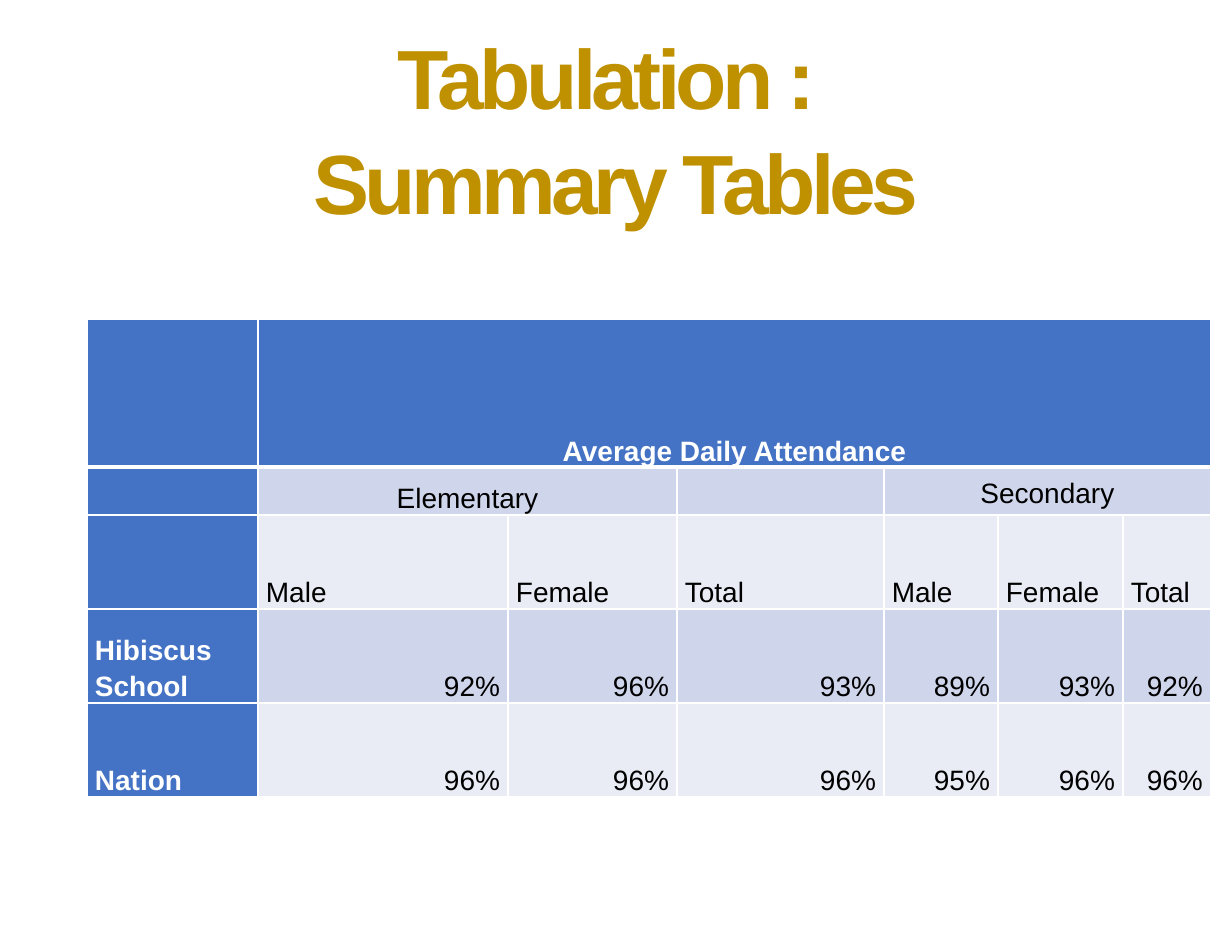
from dataclasses import dataclass

from lxml.etree import SubElement
from pptx import Presentation
from pptx.dml.color import RGBColor
from pptx.enum.text import MSO_ANCHOR as Anchor, PP_ALIGN as Align
from pptx.oxml.ns import qn
from pptx.util import Emu, Pt

PX_PER_INCH = 112
FONT = "Arial"
COLORS = {
    "title": "BF9000",
    "header": "4472C4",
    "band_dark": "CFD5EA",
    "band_light": "E9EBF5",
    "white": "FFFFFF",
    "black": "000000",
}
COLUMN_WIDTHS = [171, 250, 169, 207, 114, 125, 88]
ROW_HEIGHTS = [148, 48, 94, 94, 94]


@dataclass(frozen=True)
class Entry:
    text: str = ""
    align: Align = Align.LEFT
    anchor: Anchor = Anchor.BOTTOM
    span: int = 1


def px(length: int) -> Emu:
    return Emu(round(length * 914400 / PX_PER_INCH))


def rgb(name: str) -> RGBColor:
    return RGBColor.from_string(COLORS[name])


def add_run(paragraph, text: str, size: int, color: str, bold: bool):
    run = paragraph.add_run()
    run.text = text
    font = run.font
    font.name, font.size, font.bold = FONT, Pt(size), bold
    font.color.rgb = rgb(color)
    return run


def draw_title(slide, lines: list[str]) -> None:
    title = slide.shapes.add_textbox(px(140), px(56), px(952), px(140))
    frame = title.text_frame
    frame.word_wrap = True
    frame.vertical_anchor = Anchor.MIDDLE
    paragraph = frame.paragraphs[0]
    paragraph.alignment = Align.CENTER
    paragraph.line_spacing = 1.04
    for index, line in enumerate(lines):
        if index:
            paragraph.add_line_break()
        run = add_run(paragraph, line, 54, "title", True)
        run.font._element.set("spc", "-300")


def set_border(cell, side: str, points: int) -> None:
    line = SubElement(cell._tc.get_or_add_tcPr(), qn(f"a:ln{side}"), w=str(Pt(points)))
    fill = SubElement(line, qn("a:solidFill"))
    SubElement(fill, qn("a:srgbClr"), val=COLORS["white"])


def draw_cell(cell, entry: Entry, row: int, column: int) -> None:
    heading = row == 0 or column == 0
    thick_side = {0: "B", 1: "T"}.get(row)
    for side in "LRTB":
        set_border(cell, side, 3 if side == thick_side else 1)
    cell.fill.solid()
    band = "band_dark" if row % 2 else "band_light"
    cell.fill.fore_color.rgb = rgb("header" if heading else band)
    cell.margin_left = cell.margin_right = px(8)
    cell.margin_top = cell.margin_bottom = 0
    cell.vertical_anchor = entry.anchor
    if entry.text:
        paragraph = cell.text_frame.paragraphs[0]
        paragraph.alignment = entry.align
        paragraph.line_spacing = 1.15
        add_run(paragraph, entry.text, 18, "white" if heading else "black", heading)


def draw_table(slide, rows: list[list[Entry]]) -> None:
    attendance = slide.shapes.add_table(
        len(ROW_HEIGHTS), len(COLUMN_WIDTHS), px(87), px(319),
        px(sum(COLUMN_WIDTHS)), px(sum(ROW_HEIGHTS))).table
    for column, width in zip(attendance.columns, COLUMN_WIDTHS):
        column.width = px(width)
    for line, height in zip(attendance.rows, ROW_HEIGHTS):
        line.height = px(height)
    for row, entries in enumerate(rows):
        column = 0
        for entry in entries:
            last = column + entry.span - 1
            for position in range(column, last + 1):
                shown = entry if position == column else Entry()
                draw_cell(attendance.cell(row, position), shown, row, position)
            if entry.span > 1:
                attendance.cell(row, column).merge(attendance.cell(row, last))
            column = last + 1


def score_row(place: str, scores: list[int]) -> list[Entry]:
    return [Entry(place)] + [Entry(f"{score}%", Align.RIGHT) for score in scores]


def main() -> None:
    deck = Presentation()
    deck.slide_width, deck.slide_height = px(1232), px(952)
    slide = deck.slides.add_slide(deck.slide_layouts[6])

    # Title
    draw_title(slide, ["Tabulation : ", "Summary Tables"])

    # Attendance by school level and sex
    groups = ["Male", "Female", "Total"]
    draw_table(slide, [
        [Entry(), Entry("Average Daily Attendance", Align.CENTER, span=6)],
        [Entry(), Entry("Elementary", Align.CENTER, span=2), Entry(),
         Entry("Secondary", Align.CENTER, Anchor.MIDDLE, span=3)],
        [Entry()] + [Entry(group) for group in groups * 2],
        score_row("Hibiscus School", [92, 96, 93, 89, 93, 92]),
        score_row("Nation", [96, 96, 96, 95, 96, 96]),
    ])
    deck.save("out.pptx")


if __name__ == "__main__":
    main()
